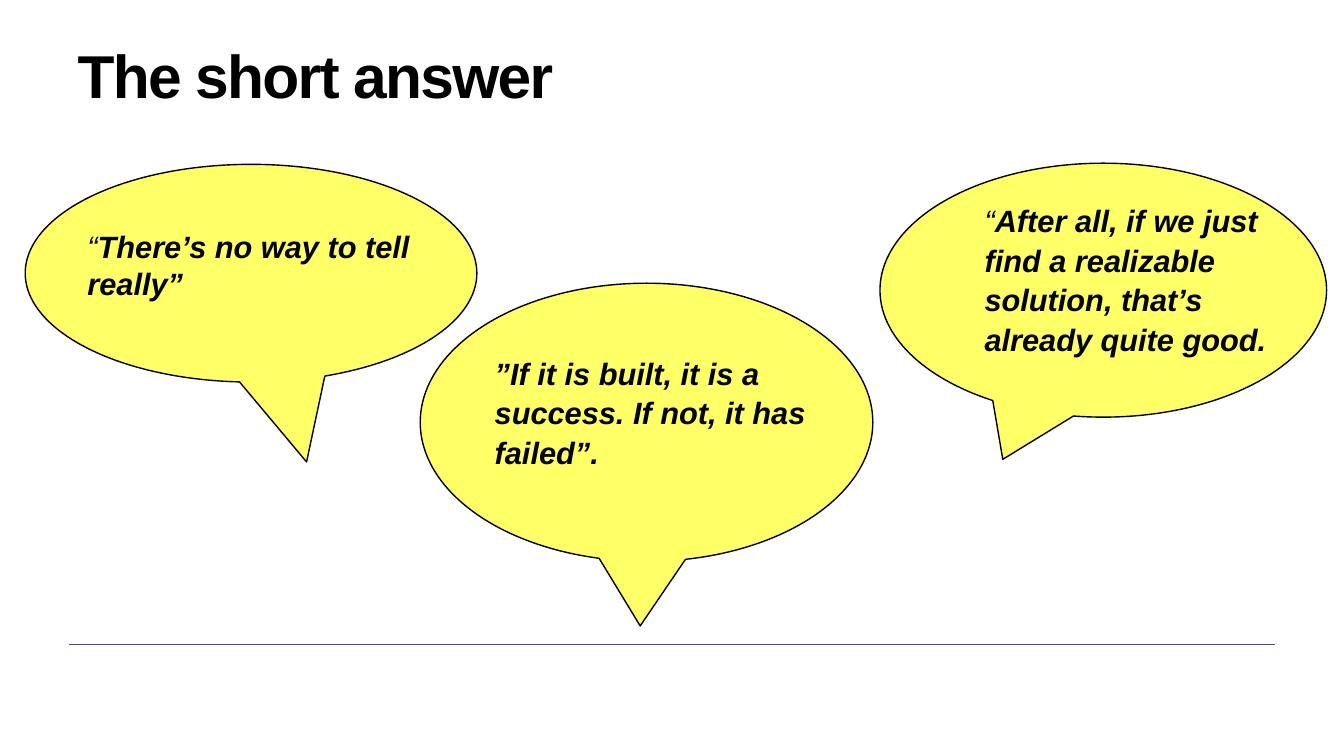
from pptx import Presentation
from pptx.dml.color import RGBColor
from pptx.enum.shapes import MSO_CONNECTOR, MSO_SHAPE
from pptx.enum.text import MSO_ANCHOR, PP_ALIGN
from pptx.util import Pt
from lxml import etree

DRAWING = "http://schemas.openxmlformats.org/drawingml/2006/main"


def color(value):
    return RGBColor.from_string(value)


def add_text(slide, box, runs, size, italic=False, line_spacing=1.0,
             space_after=0, insets=(7.2, 3.6), tracking=0, anchor=MSO_ANCHOR.TOP):
    """Each run is a pair of its text and whether it is bold."""
    shape = slide.shapes.add_textbox(*map(Pt, box))
    frame = shape.text_frame
    frame.word_wrap = True
    frame.vertical_anchor = anchor
    frame.margin_left = frame.margin_right = Pt(insets[0])
    frame.margin_top = frame.margin_bottom = Pt(insets[1])
    paragraph = frame.paragraphs[0]
    paragraph.alignment = PP_ALIGN.LEFT
    paragraph.line_spacing = line_spacing
    paragraph.space_after = Pt(space_after)
    for text, bold in runs:
        run = paragraph.add_run()
        run.text = text
        run.font.name = "Arial"
        run.font.size = Pt(size)
        run.font.bold = bold
        run.font.italic = italic
        run.font.color.rgb = color("000000")
        if tracking:
            run.font._element.set("spc", str(round(tracking * 100)))


presentation = Presentation()
presentation.slide_width = Pt(960)
presentation.slide_height = Pt(540)
slide = presentation.slides.add_slide(presentation.slide_layouts[6])

# Footer rule
rule = slide.shapes.add_connector(
    MSO_CONNECTOR.STRAIGHT, Pt(49), Pt(460.5), Pt(911), Pt(460.5))
rule.line.color.rgb = color("44546A")
rule.line.width = Pt(1)
etree.SubElement(rule._element.spPr, f"{{{DRAWING}}}effectLst")

# Title
add_text(slide, (55.4, 34.6, 355.7, 44.6), [("The short answer", True)], 43.2,
         line_spacing=0.85, insets=(0, 0), tracking=-1.2, anchor=MSO_ANCHOR.BOTTOM)

# Speech bubbles: outline box, tail tip, text box, runs, line spacing, space after
bubbles = [
    ((300.2, 202.3, 323.3, 198.7), (-0.014, 0.732), (346.3, 247.7, 254.2, 46.8),
     [("”If it is built, it is a success. If not, it has failed”.", True)], 1.07, 8),
    ((18, 117.4, 322.6, 155.5), (0.123, 0.867), (55.4, 159.1, 254.2, 57.6),
     [("“", False), ("There’s no way to tell really”", True)], 1.0, 0),
    ((628.6, 116.6, 319, 181.4), (-0.225, 0.666), (696.2, 139, 251.3, 97.9),
     [("“", False), ("After all, if we just find a realizable solution, "
                     "that’s already quite good.", True)], 1.07, 8),
]
for outline, tail, text_box, runs, line_spacing, space_after in bubbles:
    bubble = slide.shapes.add_shape(MSO_SHAPE.OVAL_CALLOUT, *map(Pt, outline))
    bubble.adjustments[0], bubble.adjustments[1] = tail
    bubble.shadow.inherit = False
    bubble.fill.solid()
    bubble.fill.fore_color.rgb = color("FFFF66")
    bubble.line.color.rgb = color("000000")
    bubble.line.width = Pt(1)
    add_text(slide, text_box, runs, 22, italic=True,
             line_spacing=line_spacing, space_after=space_after)

presentation.save("out.pptx")
